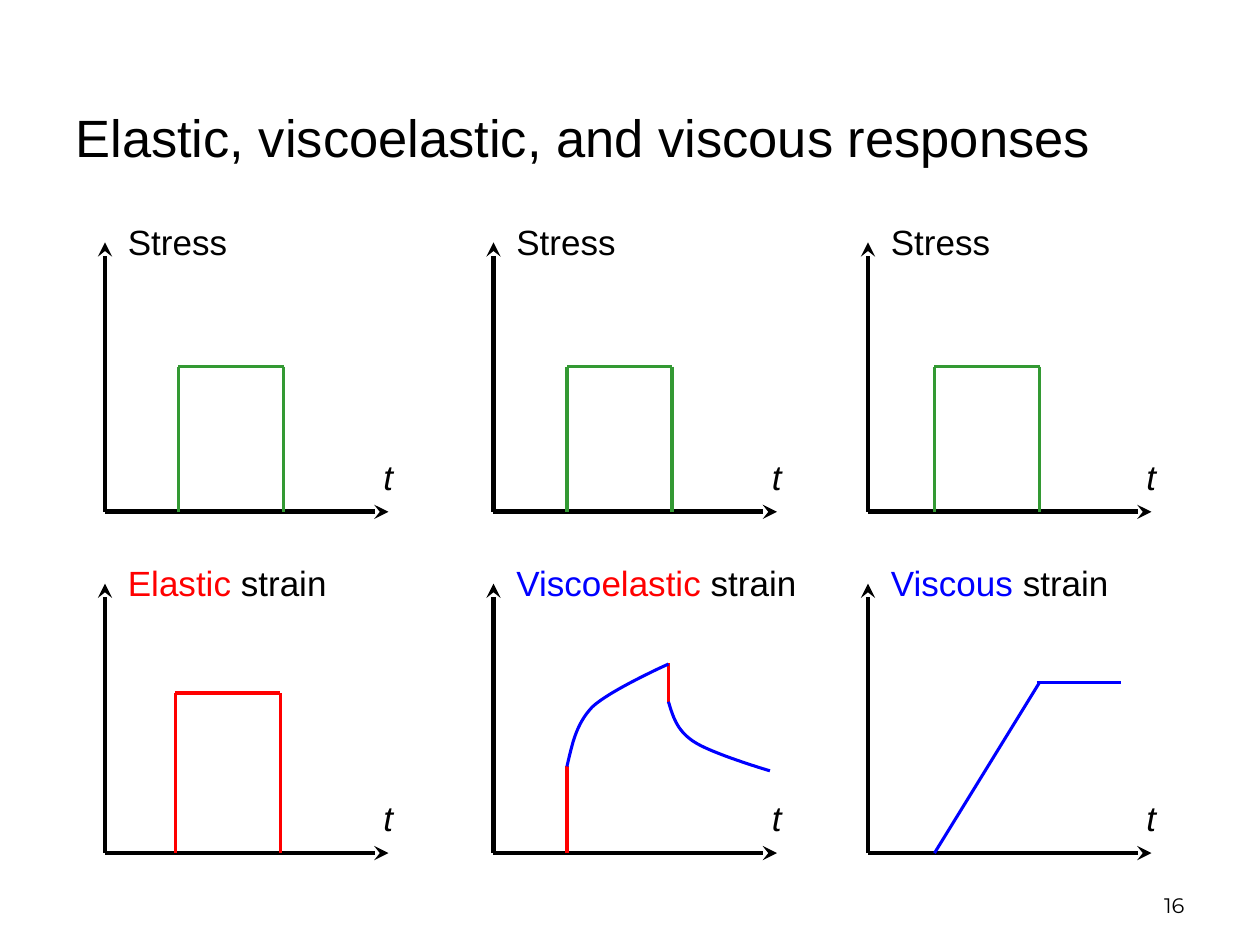
"""Build a slide comparing elastic, viscoelastic and viscous responses to a stress pulse."""
from lxml.etree import SubElement
from pptx import Presentation
from pptx.dml.color import RGBColor
from pptx.enum.shapes import MSO_CONNECTOR
from pptx.enum.text import MSO_ANCHOR, MSO_AUTO_SIZE, PP_ALIGN
from pptx.oxml.ns import qn
from pptx.util import Pt

COLORS = {"black": "000000", "red": "FF0000", "blue": "0000FF", "green": "339933"}
TITLE = "Elastic, viscoelastic, and viscous responses"
PAGE_NUMBER = "16"
STRESS_LABEL = [("Stress", "black")]
COLUMNS = [
    {"left": 60, "pulse": 102, "width": 129,
     "strain": [("Elastic", "red"), (" strain", "black")]},
    {"left": 282, "pulse": 324, "width": 176,
     "strain": [("Visco", "blue"), ("elastic", "red"), (" strain", "black")]},
    {"left": 496, "pulse": 534, "width": 140,
     "strain": [("Viscous", "blue"), (" strain", "black")]},
]
STRESS_BASE, STRAIN_BASE = 292.5, 487.5
AXIS_HEIGHT, AXIS_WIDTH = 154, 162
PULSE_WIDTH = 60
STRESS_TOP, ELASTIC_TOP, VISCOUS_TOP = 209.5, 396, 390
STRAIN_LINES = [
    ((594, VISCOUS_TOP), (534, STRAIN_BASE), "blue"),
    ((592.5, VISCOUS_TOP), (640.5, VISCOUS_TOP), "blue"),
    ((324, 438), (324, STRAIN_BASE), "red"),
    ((382, 379), (382, 401), "red"),
]
CREEP = [(324, 438), (327, 425.5), (329, 414), (338.5, 404),
         (348.5, 394.5), (382, 379.5), (382, 379.5)]
RECOVERY = [(382, 401), (384.5, 409), (386.5, 417), (396, 423.5),
            (406, 430.5), (440, 440.5), (440, 440.5)]
CURVE_STEPS = 16


def color(name):
    return RGBColor.from_string(COLORS[name])


def add_line(slide, start, end, color_name, width=1.75, arrow=False):
    line = slide.shapes.add_connector(
        MSO_CONNECTOR.STRAIGHT, *(Pt(value) for value in (*start, *end)))
    line.line.color.rgb = color(color_name)
    line.line.width = Pt(width)
    if arrow:
        SubElement(line.line._get_or_add_ln(), qn("a:tailEnd"), type="stealth")
    SubElement(line._element.spPr, qn("a:effectLst"))


def add_text(slide, box, runs, size=20, font="Arial", italic=False, wrap=False,
             anchor=MSO_ANCHOR.TOP, align=PP_ALIGN.LEFT):
    text_frame = slide.shapes.add_textbox(*(Pt(value) for value in box)).text_frame
    text_frame.word_wrap = wrap
    text_frame.auto_size = MSO_AUTO_SIZE.NONE if wrap else MSO_AUTO_SIZE.SHAPE_TO_FIT_TEXT
    text_frame.vertical_anchor = anchor
    paragraph = text_frame.paragraphs[0]
    paragraph.alignment = align
    for text, color_name in runs:
        run = paragraph.add_run()
        run.text = text
        run.font.name = font
        run.font.size = Pt(size)
        run.font.italic = italic
        run.font.color.rgb = color(color_name)


def add_axes(slide, left, base, label, label_width):
    origin = (left, base)
    top = base - AXIS_HEIGHT
    add_line(slide, origin, (left, top), "black", 2.75, True)
    add_line(slide, origin, (left + AXIS_WIDTH, base), "black", 2.75, True)
    add_text(slide, (left + 6, top - 16, label_width, 31.5), label)
    add_text(slide, (left + 152, base - 36, 20, 31.5), [("t", "black")], italic=True)


def add_pulse(slide, left, top, base, color_name):
    right = left + PULSE_WIDTH
    for x in (left, right):
        add_line(slide, (x, top), (x, base), color_name)
    add_line(slide, (left, top), (right, top), color_name)


def bezier_point(controls, t):
    weights = ((1 - t) ** 3, 3 * t * (1 - t) ** 2, 3 * t ** 2 * (1 - t), t ** 3)
    return tuple(sum(weight * point[axis] for weight, point in zip(weights, controls))
                 for axis in (0, 1))


def add_curve(slide, controls, color_name):
    points = [bezier_point(controls[first:first + 4], step / CURVE_STEPS)
              for first in range(0, len(controls) - 1, 3)
              for step in range(1, CURVE_STEPS + 1)]
    builder = slide.shapes.build_freeform(*(Pt(value) for value in controls[0]))
    builder.add_line_segments([(Pt(x), Pt(y)) for x, y in points], close=False)
    curve = builder.convert_to_shape()
    curve.shadow.inherit = False
    curve.fill.background()
    curve.line.color.rgb = color(color_name)
    curve.line.width = Pt(1.75)


def main():
    presentation = Presentation()
    presentation.slide_width, presentation.slide_height = Pt(720), Pt(540)
    slide = presentation.slides.add_slide(presentation.slide_layouts[6])
    add_text(slide, (36, 36, 636, 84), [(TITLE, "black")], size=30, wrap=True,
             anchor=MSO_ANCHOR.MIDDLE)
    for column in COLUMNS:
        add_axes(slide, column["left"], STRESS_BASE, STRESS_LABEL, 72)
        add_axes(slide, column["left"], STRAIN_BASE, column["strain"], column["width"])
        add_pulse(slide, column["pulse"], STRESS_TOP, STRESS_BASE, "green")
    add_pulse(slide, 100.25, ELASTIC_TOP, STRAIN_BASE, "red")
    for start, end, color_name in STRAIN_LINES:
        add_line(slide, start, end, color_name)
    for controls in (CREEP, RECOVERY):
        add_curve(slide, controls, "blue")
    add_text(slide, (516, 492, 168, 36), [(PAGE_NUMBER, "black")], size=12,
             font="Montserrat", wrap=True, anchor=MSO_ANCHOR.BOTTOM, align=PP_ALIGN.RIGHT)
    presentation.save("out.pptx")


if __name__ == "__main__":
    main()
